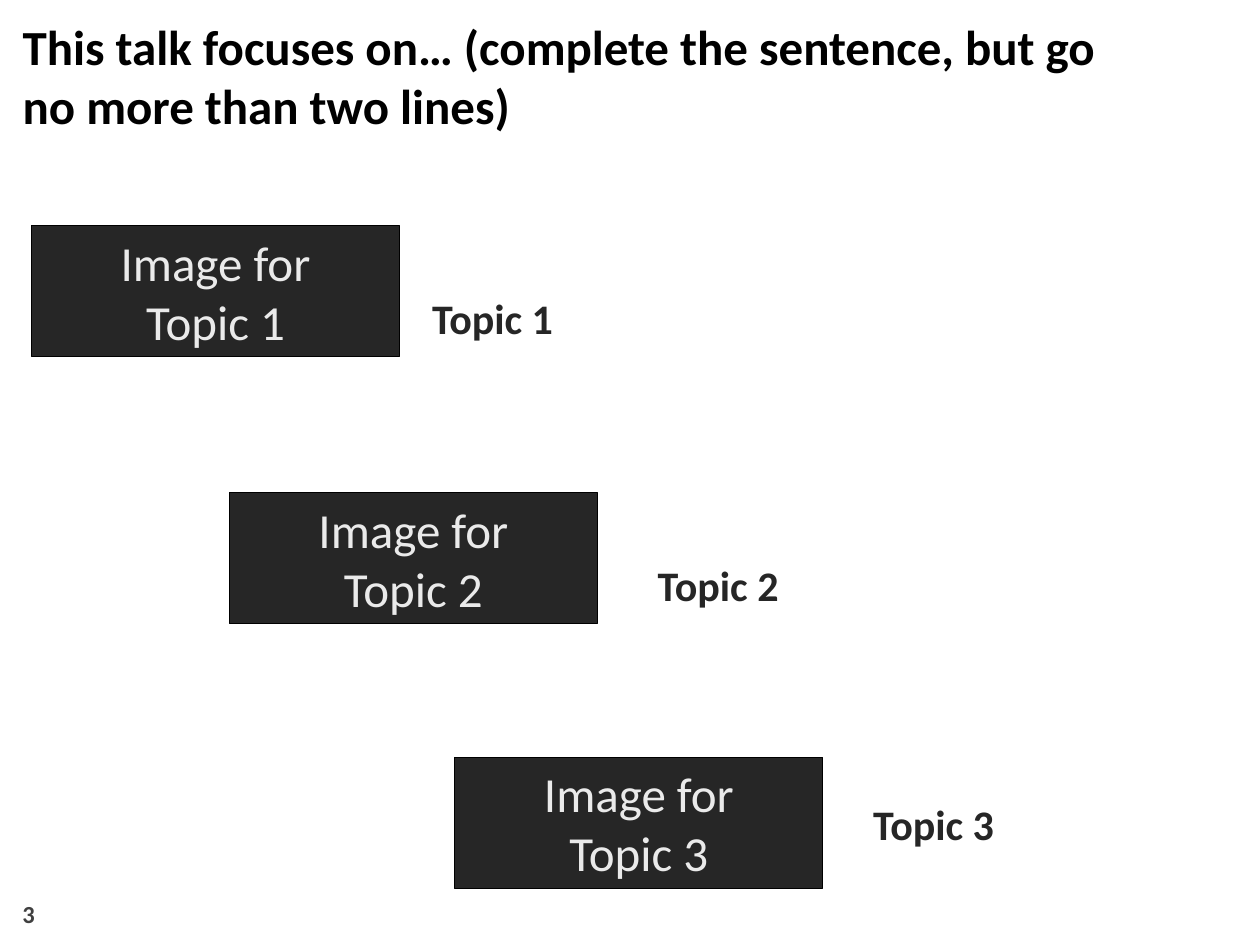
from dataclasses import dataclass

from pptx import Presentation
from pptx.dml.color import RGBColor
from pptx.enum.shapes import MSO_SHAPE
from pptx.enum.text import MSO_ANCHOR, MSO_AUTO_SIZE, PP_ALIGN
from pptx.util import Inches, Pt

RECTANGLE = MSO_SHAPE.RECTANGLE
TOP, MIDDLE, BOTTOM = MSO_ANCHOR.TOP, MSO_ANCHOR.MIDDLE, MSO_ANCHOR.BOTTOM
LEFT, CENTER = PP_ALIGN.LEFT, PP_ALIGN.CENTER
GROW = MSO_AUTO_SIZE.SHAPE_TO_FIT_TEXT
TITLE_ONLY = 5


@dataclass(frozen=True)
class Theme:
    font: str = "Calibri"
    black: RGBColor = RGBColor(0x00, 0x00, 0x00)
    dark: RGBColor = RGBColor(0x26, 0x26, 0x26)
    gray: RGBColor = RGBColor(0x40, 0x40, 0x40)
    light: RGBColor = RGBColor(0xEA, 0xEA, 0xEA)
    title_size: Pt = Pt(28)
    panel_size: Pt = Pt(28)
    label_size: Pt = Pt(24)
    number_size: Pt = Pt(14)
    outline: Pt = Pt(0.75)


THEME = Theme()
TITLE_LINES = (
    "This talk focuses on… (complete the sentence, but go ",
    "no more than two lines)",
)
PANEL_SIZE = (2.92, 1.04)
LABEL_SIZE = (1.3, 0.46)
# Topic name, panel corner, label corner
TOPICS = (
    ("Topic 1", (0.25, 1.79), (3.36, 2.29)),
    ("Topic 2", (1.82, 3.91), (5.15, 4.41)),
    ("Topic 3", (3.61, 6.01), (6.86, 6.31)),
)


def inches(box):
    return [Inches(value) for value in box]


def add_run(paragraph, text, size, color, bold=False):
    run = paragraph.add_run()
    run.text = text
    run.font.name = THEME.font
    run.font.size = size
    run.font.bold = bold
    run.font.color.rgb = color


def add_text(slide, box, text, size, color, anchor=TOP):
    shape = slide.shapes.add_textbox(*inches(box))
    frame = shape.text_frame
    frame.word_wrap = True
    frame.vertical_anchor = anchor
    add_run(frame.paragraphs[0], text, size, color, bold=True)
    return frame


def add_title(slide, box):
    title = slide.shapes.title
    title.left, title.top, title.width, title.height = inches(box)
    frame = title.text_frame
    frame.word_wrap = True
    frame.auto_size = GROW
    frame.vertical_anchor = TOP
    paragraph = frame.paragraphs[0]
    paragraph.alignment = LEFT
    for index, line in enumerate(TITLE_LINES):
        if index:
            paragraph.add_line_break()
        add_run(paragraph, line, THEME.title_size, THEME.black, bold=True)


def add_panel(slide, box, topic):
    panel = slide.shapes.add_shape(RECTANGLE, *inches(box))
    panel.shadow.inherit = False
    panel.fill.solid()
    panel.fill.fore_color.rgb = THEME.dark
    panel.line.color.rgb = THEME.black
    panel.line.width = THEME.outline
    frame = panel.text_frame
    frame.word_wrap = True
    frame.auto_size = GROW
    frame.vertical_anchor = MIDDLE
    for index, line in enumerate(("Image for", topic)):
        paragraph = frame.add_paragraph() if index else frame.paragraphs[0]
        paragraph.alignment = CENTER
        add_run(paragraph, line, THEME.panel_size, THEME.light)


def add_label(slide, box, topic):
    frame = add_text(slide, box, topic, THEME.label_size, THEME.dark)
    frame.auto_size = GROW
    frame.margin_left = frame.margin_right = Inches(0.07)
    frame.margin_top = frame.margin_bottom = Inches(0.03)


def main():
    presentation = Presentation()
    presentation.slide_width = Inches(10)
    presentation.slide_height = Inches(7.5)
    slide = presentation.slides.add_slide(presentation.slide_layouts[TITLE_ONLY])

    # Heading
    add_title(slide, (0.08, 0.08, 9.88, 1.03))

    # Descending staircase of topics
    for topic, panel_corner, label_corner in TOPICS:
        add_label(slide, label_corner + LABEL_SIZE, topic)
        add_panel(slide, panel_corner + PANEL_SIZE, topic)

    # Slide number
    add_text(slide, (0.08, 7.02, 2.33, 0.4), "3",
             THEME.number_size, THEME.gray, anchor=BOTTOM)

    presentation.save("out.pptx")


if __name__ == "__main__":
    main()
